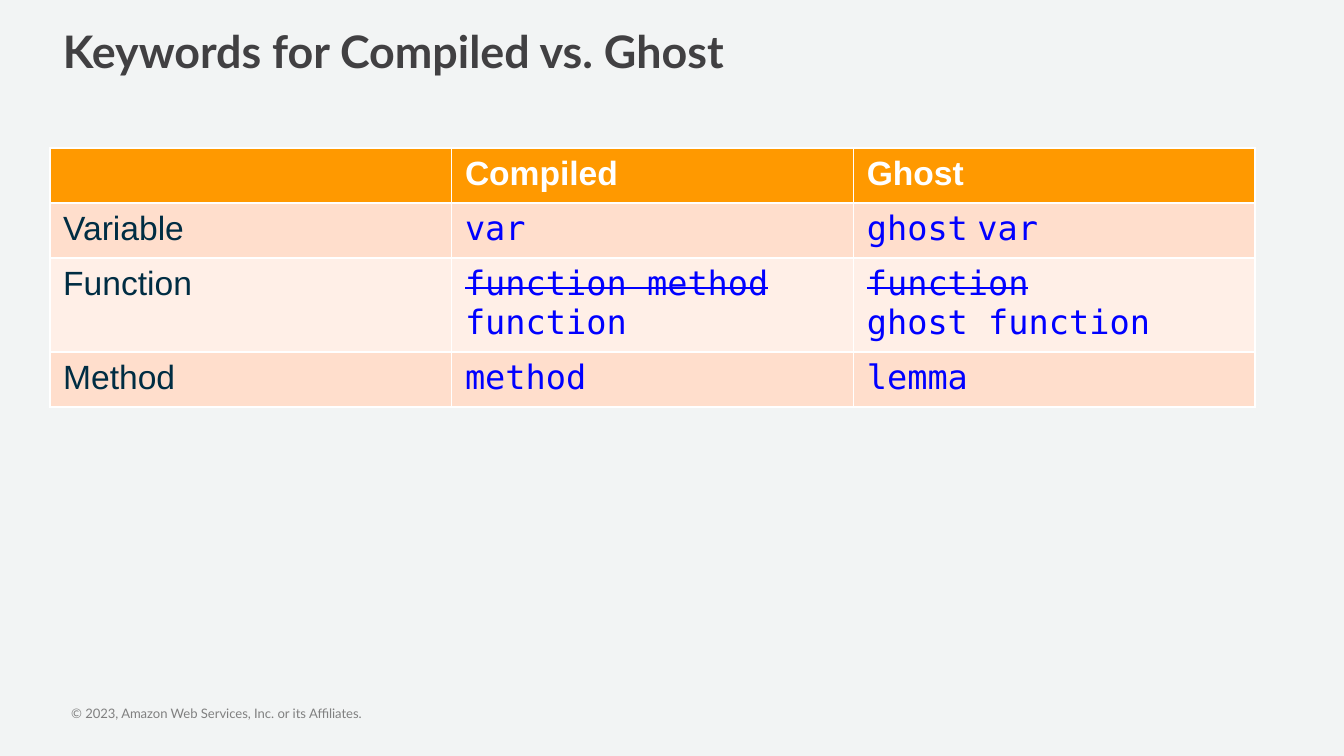
from pptx import Presentation
from pptx.dml.color import RGBColor
from pptx.util import Inches, Pt

COLORS = {
    "back": "F2F4F4", "title": "414042", "foot": "808080", "head": "FF9900",
    "odd": "FFDECC", "even": "FFEFE7", "white": "FFFFFF", "label": "002D43",
    "code": "0000FF",
}
MONO = "DejaVu Sans Mono"
HEADS = ["", "Compiled", "Ghost"]
# Each code cell is a list of lines; a line starting with "~" is struck out.
ROWS = [
    ("Variable", ["var"], ["ghost var"]),
    ("Function", ["~function method", "function"],
     ["~function", "ghost function"]),
    ("Method", ["method"], ["lemma"]),
]


def color(name):
    return RGBColor.from_string(COLORS[name])


def write(para, text, size=18, face="Arial", tint="label", bold=False,
          strike=False):
    run = para.add_run()
    run.text = text
    font = run.font
    font.size, font.name, font.bold = Pt(size), face, bold
    font.color.rgb = color(tint)
    if strike:
        font._element.set("strike", "sngStrike")


def add_text(slide, text, left, top, width, height, inset=None, **style):
    box = slide.shapes.add_textbox(
        Inches(left), Inches(top), Inches(width), Inches(height))
    frame = box.text_frame
    frame.word_wrap = True
    if inset is not None:
        frame.margin_left = frame.margin_right = Inches(inset)
        frame.margin_top = frame.margin_bottom = Inches(inset)
    write(frame.paragraphs[0], text, **style)


def paint(fill, name):
    fill.solid()
    fill.fore_color.rgb = color(name)


def write_code(cell, lines):
    frame = cell.text_frame
    for i, line in enumerate(lines):
        para = frame.add_paragraph() if i else frame.paragraphs[0]
        text = line.lstrip("~")
        style = dict(face=MONO, tint="code", strike=text != line)
        if text == "ghost var":  # narrow space between the two keywords
            write(para, "ghost", **style)
            write(para, " ", tint="code")
            text = "var"
        write(para, text, **style)


def add_grid(slide):
    """Add the table; its default style draws the white borders."""
    count = len(ROWS) + 1
    table = slide.shapes.add_table(
        count, 3, Inches(0.37), Inches(1.1), Inches(8.97),
        Inches(0.41 * count)).table
    for col, head in enumerate(HEADS):
        cell = table.cell(0, col)
        paint(cell.fill, "head")
        if head:
            write(cell.text_frame.paragraphs[0], head, tint="white", bold=True)
    for row, (label, *codes) in enumerate(ROWS, 1):
        for cell in table.rows[row].cells:
            paint(cell.fill, "odd" if row % 2 else "even")
        write(table.cell(row, 0).text_frame.paragraphs[0], label)
        for col, lines in enumerate(codes, 1):
            write_code(table.cell(row, col), lines)


def main():
    deck = Presentation()
    deck.slide_width = Inches(10)
    deck.slide_height = deck.slide_width * 9 // 16
    slide = deck.slides.add_slide(deck.slide_layouts[6])
    paint(slide.background.fill, "back")
    add_text(slide, "© 2023, Amazon Web Services, Inc. or its Affiliates.",
             0.53, 5.25, 4.86, 0.12, inset=0, size=7, face="Lato", tint="foot")
    add_text(slide, "Keywords for Compiled vs. Ghost", 0.37, 0.13, 8.97, 0.6,
             size=24, face="Lato", tint="title", bold=True)
    add_grid(slide)
    deck.save("out.pptx")


if __name__ == "__main__":
    main()
